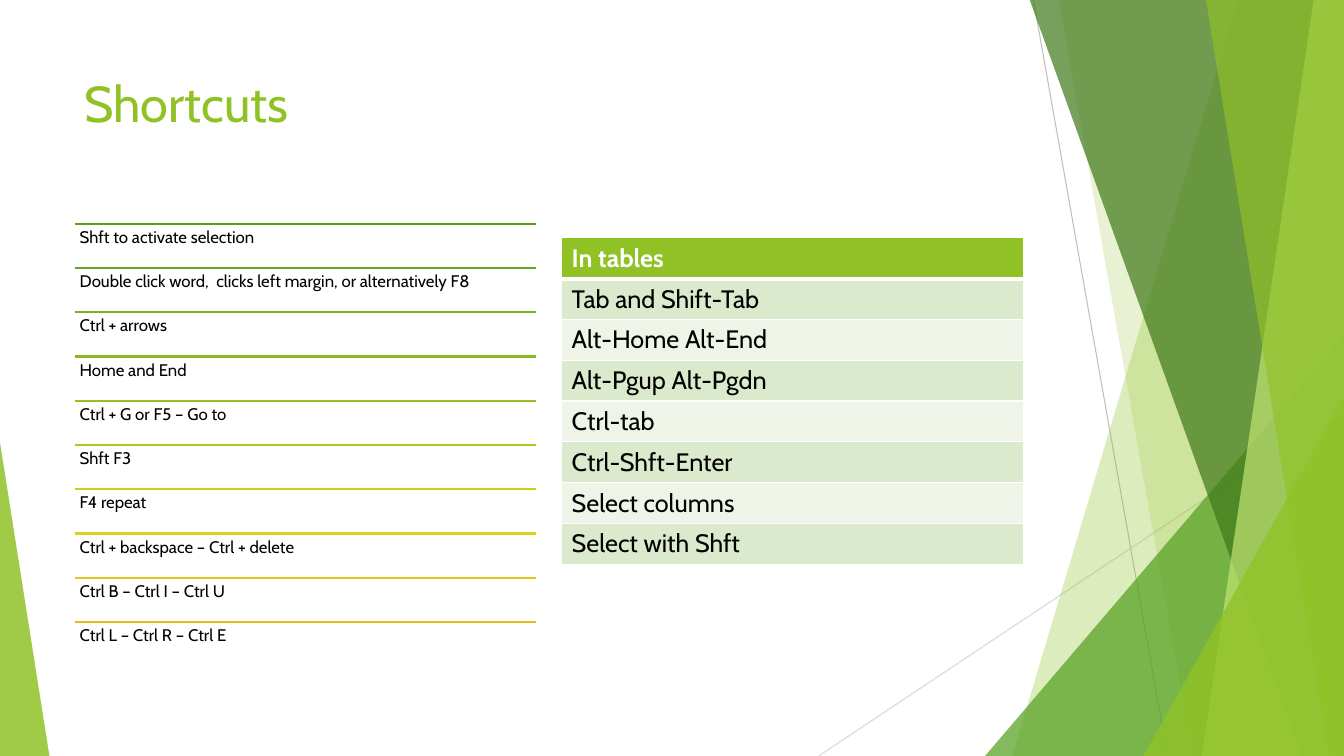
from lxml.etree import SubElement
from pptx import Presentation
from pptx.dml.color import RGBColor
from pptx.enum.shapes import MSO_CONNECTOR, MSO_SHAPE
from pptx.enum.text import MSO_ANCHOR, PP_ALIGN
from pptx.oxml.ns import qn
from pptx.util import Inches, Pt

FONT = "Cabin"
WHITE = RGBColor(0xFF, 0xFF, 0xFF)
BLACK = RGBColor(0x00, 0x00, 0x00)
GRAY = RGBColor(0xBF, 0xBF, 0xBF)
LIGHT_GRAY = RGBColor(0xD9, 0xD9, 0xD9)
LIME = RGBColor(0x90, 0xC2, 0x26)
GREEN = RGBColor(0x54, 0xA0, 0x21)
DARK_GREEN = RGBColor(0x3F, 0x78, 0x19)
PALE_LIME = RGBColor(0xC0, 0xE4, 0x74)
BAND_DARK = RGBColor(0xDB, 0xE9, 0xCD)
BAND_LIGHT = RGBColor(0xEE, 0xF4, 0xE8)

WIDTH, HEIGHT = 13.33, 7.5
BLEED_TOP = -0.01
LIST_LEFT, LIST_TOP, LIST_WIDTH, LIST_HEIGHT = 0.74, 2.22, 4.58, 4.39
TABLE_LEFT, TABLE_TOP, TABLE_HEIGHT = 5.57, 2.36, 3.24

SHORTCUTS = [
    ("Shft to activate selection", GREEN),
    ("Double click word,  clicks left margin, or alternatively F8", RGBColor(0x63, 0xA8, 0x21)),
    ("Ctrl + arrows", RGBColor(0x74, 0xB0, 0x20)),
    ("Home and End", RGBColor(0x86, 0xB8, 0x20)),
    ("Ctrl + G or F5 – Go to", RGBColor(0x9A, 0xC0, 0x1F)),
    ("Shft F3", RGBColor(0xB0, 0xC8, 0x1E)),
    ("F4 repeat", RGBColor(0xC7, 0xD0, 0x1D)),
    ("Ctrl + backspace – Ctrl + delete", RGBColor(0xD9, 0xD1, 0x1C)),
    ("Ctrl B – Ctrl I – Ctrl U", RGBColor(0xE1, 0xC7, 0x1B)),
    ("Ctrl L – Ctrl R – Ctrl E", RGBColor(0xE6, 0xB9, 0x1E)),
]
TABLE_ROWS = [
    "In tables", "Tab and Shift-Tab", "Alt-Home Alt-End", "Alt-Pgup Alt-Pgdn",
    "Ctrl-tab", "Ctrl-Shft-Enter", "Select columns", "Select with Shft",
]


def write_text(frame, text, size=18, color=BLACK, bold=False, spacing=1.0):
    """Write one formatted, left-aligned paragraph into a text frame."""
    para = frame.paragraphs[0]
    para.alignment = PP_ALIGN.LEFT
    para.line_spacing = spacing
    span = para.add_run()
    span.text = text
    span.font.name = FONT
    span.font.size = Pt(size)
    span.font.bold = bold
    span.font.color.rgb = color


def add_text_box(page, left, top, width, height, text, inset=0.1, **text_format):
    """Add a wrapping, top-anchored text box."""
    box = page.shapes.add_textbox(Inches(left), Inches(top), Inches(width), Inches(height))
    frame = box.text_frame
    frame.word_wrap = True
    frame.vertical_anchor = MSO_ANCHOR.TOP
    frame.margin_left = frame.margin_right = Inches(inset)
    frame.margin_top = frame.margin_bottom = Inches(0.05)
    write_text(frame, text, **text_format)


def add_line(page, start, end, color, weight):
    """Add a straight line without a shadow."""
    line = page.shapes.add_connector(
        MSO_CONNECTOR.STRAIGHT, *(Inches(value) for value in (*start, *end))
    )
    line.line.color.rgb = color
    line.line.width = Pt(weight)
    SubElement(line.element.spPr, qn("a:effectLst"))


def paint(shape, color, opacity):
    """Give a shape a translucent fill, no outline and no shadow."""
    shape.shadow.inherit = False
    shape.line.fill.background()
    shape.fill.solid()
    shape.fill.fore_color.rgb = color
    color_node = shape.element.spPr.find(qn("a:solidFill"))[0]
    SubElement(color_node, qn("a:alpha"), val=str(opacity * 1000))


def add_ray(page, top_left, bottom_left, color, opacity):
    """Add a full-height facet that reaches the right edge of the slide."""
    corners = [
        (top_left, BLEED_TOP), (WIDTH, BLEED_TOP), (WIDTH, HEIGHT), (bottom_left, HEIGHT),
    ]
    points = [(Inches(x), Inches(y)) for x, y in corners]
    builder = page.shapes.build_freeform(*points[0], scale=1.0)
    builder.add_line_segments(points[1:], close=True)
    paint(builder.convert_to_shape(), color, opacity)


def add_corner(page, left, top, width, apex, color, opacity):
    """Add a triangle that stands on the bottom edge of the slide."""
    triangle = page.shapes.add_shape(
        MSO_SHAPE.ISOSCELES_TRIANGLE,
        Inches(left), Inches(top), Inches(width), Inches(HEIGHT - top),
    )
    triangle.adjustments[0] = apex
    paint(triangle, color, opacity)


def add_facets(page):
    """Draw the decorative lines and facets from back to front."""
    add_line(page, (10.25, 0), (11.58, HEIGHT), GRAY, 0.75)
    add_line(page, (WIDTH, 4.03), (8.12, HEIGHT), LIGHT_GRAY, 0.75)
    add_ray(page, 12.28, 10.04, LIME, 30)
    add_ray(page, 10.5, 11.83, LIME, 20)
    add_corner(page, 9.77, 3.33, 3.56, 1, GREEN, 72)
    add_ray(page, 10.21, 12.91, DARK_GREEN, 70)
    add_ray(page, 13.03, 11.92, PALE_LIME, 70)
    add_ray(page, 11.96, 13.18, LIME, 65)
    add_corner(page, 11.34, 3.93, 1.99, 1, LIME, 80)
    add_corner(page, 0, 4.39, 0.49, 0, LIME, 85)


def add_shortcut_list(page):
    """Stack the shortcuts at an equal pitch, each under its coloured rule."""
    pitch = LIST_HEIGHT / len(SHORTCUTS)
    for index, (text, color) in enumerate(SHORTCUTS):
        top = LIST_TOP + index * pitch
        add_line(page, (LIST_LEFT, top), (LIST_LEFT + LIST_WIDTH, top), color, 1.5)
        add_text_box(page, LIST_LEFT, top, LIST_WIDTH, pitch, text,
                     inset=0.05, size=12, spacing=0.9)


def add_borders(cell, **weights):
    """Draw white borders on the named sides of a cell."""
    properties = cell._tc.get_or_add_tcPr()
    for side, weight in weights.items():
        border = SubElement(properties, qn(f"a:ln{side}"), w=str(Pt(weight)))
        fill = SubElement(border, qn("a:solidFill"))
        SubElement(fill, qn("a:srgbClr"), val=str(WHITE))


def add_shortcut_table(page):
    """Add the one-column table with a header and banded rows."""
    count = len(TABLE_ROWS)
    table = page.shapes.add_table(
        count, 1, Inches(TABLE_LEFT), Inches(TABLE_TOP), Inches(LIST_WIDTH), Inches(TABLE_HEIGHT)
    ).table
    for index, text in enumerate(TABLE_ROWS):
        header = index == 0
        table.rows[index].height = Inches(TABLE_HEIGHT / count)
        cell = table.cell(index, 0)
        add_borders(cell, L=1, R=1, T=3 if index == 1 else 1, B=3 if header else 1)
        cell.fill.solid()
        cell.fill.fore_color.rgb = LIME if header else (BAND_LIGHT, BAND_DARK)[index % 2]
        write_text(cell.text_frame, text, color=WHITE if header else BLACK, bold=header)


def main():
    """Build and save the slide."""
    deck = Presentation()
    deck.slide_width, deck.slide_height = Inches(WIDTH), Inches(HEIGHT)
    page = deck.slides.add_slide(deck.slide_layouts[6])
    add_facets(page)
    add_text_box(page, LIST_LEFT, 0.67, 9.4, 1.44, "Shortcuts", size=36, color=LIME)
    add_shortcut_list(page)
    add_shortcut_table(page)
    deck.save("out.pptx")


if __name__ == "__main__":
    main()
